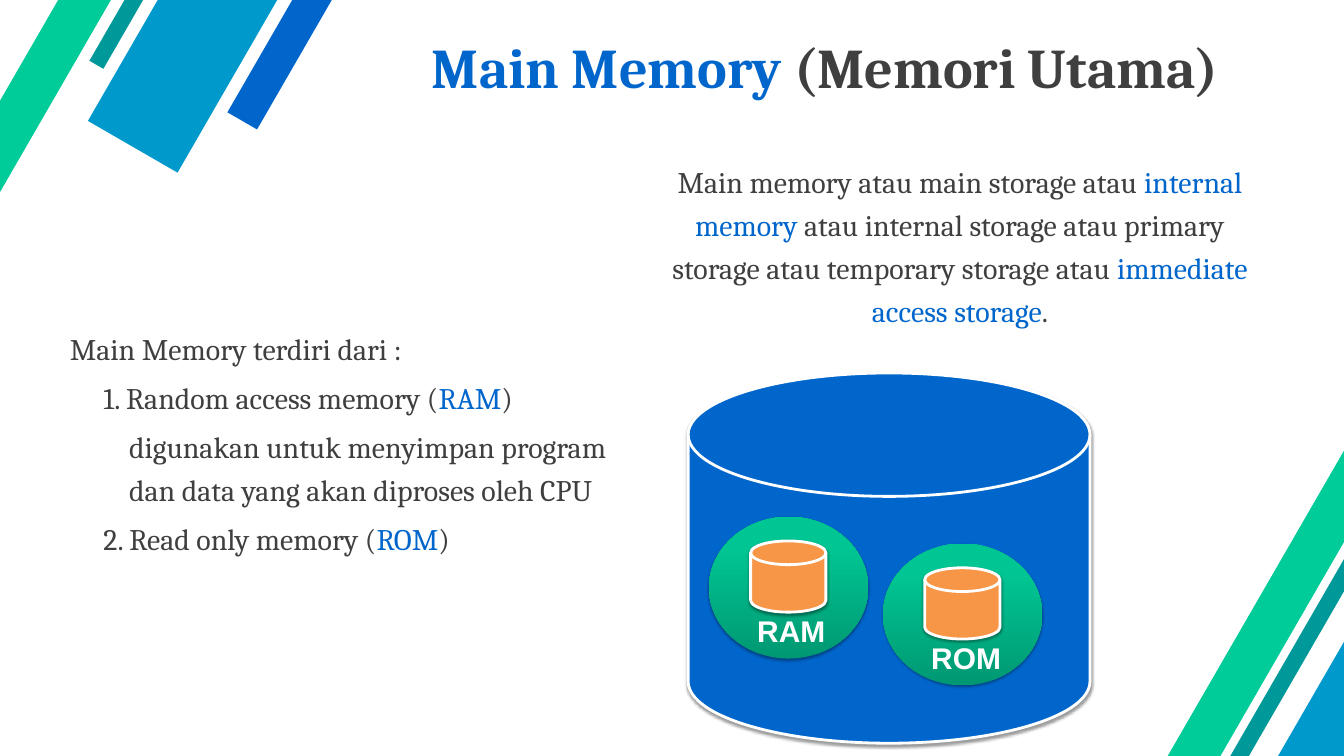
"""Build the main memory slide: RAM and ROM inside one store."""
from lxml import etree
from pptx import Presentation
from pptx import util as u
from pptx.dml.color import RGBColor
from pptx.enum import shapes, text
from pptx.oxml import parse_xml
from pptx.oxml.ns import nsdecls, qn

BLUE, CYAN, TEAL, GREEN = "0066CC", "0099CC", "009999", "00CC99"
GREY, WHITE, ORANGE = "3F3F3F", "FFFFFF", "F79646"
DISK = shapes.MSO_SHAPE.FLOWCHART_MAGNETIC_DISK


def tint(item, code):
    item.rgb = RGBColor.from_string(code)


def draw(kind, box, fill=None, edge=None, shade=0):
    shape = slide.shapes.add_shape(kind, *map(u.Inches, box))
    shape.shadow.inherit = False
    if fill:
        shape.fill.solid()
        tint(shape.fill.fore_color, fill)
    if edge:
        tint(shape.line.color, edge)
        shape.line.width = u.Pt(3)
    else:
        shape.line.fill.background()
    if shade:
        glow = shape._element.spPr.find(qn("a:effectLst"))
        glow.append(parse_xml(
            f'<a:outerShdw {nsdecls("a")} blurRad="40000" dist="{u.Pt(1.7)}" dir="5400000" '
            f'rotWithShape="0"><a:srgbClr val="000000"><a:alpha val="{shade * 1000}"/>'
            '</a:srgbClr></a:outerShdw>'))
    return shape


prs = Presentation()
prs.slide_width, prs.slide_height = u.Inches(20), u.Inches(11.25)
slide = prs.slides.add_slide(prs.slide_layouts[3])

bands = [
    (-1.42, -7.16, 0.51, BLUE), (-3.05, -7.29, 1.54, CYAN),
    (-3.59, -7.86, 0.24, TEAL), (-5.83, -5.47, 0.68, GREEN),
    (13.68, 3.86, 1.54, CYAN), (12.9, 3.33, 0.24, TEAL), (10.71, 5.73, 0.68, GREEN),
]
for x, y, high, code in bands:
    band = draw(shapes.MSO_SHAPE.RECTANGLE, (x, y, 20.1, high), code)
    band.rotation = 300

draw(DISK, (10.24, 5.55, 5.98, 5.51), BLUE, WHITE, 38)

MID, LEFT = text.PP_ALIGN.CENTER, text.PP_ALIGN.LEFT
blocks = [
    (0, (4.8, 0.45, 14.96, 1.08), 60, MID, [("|Main Memory |(Memori Utama)", 0, 0)]),
    (1, (9.64, 2.24, 9.29, 2.2), 32, MID, [
        ("Main memory atau main storage atau |internal memory |atau internal storage atau "
         "primary storage atau temporary storage atau |immediate access storage|.", 0, 0)]),
    (2, (0.86, 4.72, 8.5, 4.91), 32, LEFT, [
        ("Main Memory terdiri dari :", 0, 0),
        ("1. Random access memory (|RAM|)", 0.5, 0),
        ("digunakan untuk menyimpan program dan data yang akan diproses oleh CPU", 0.88, 0),
        ("2. Read only memory (|ROM|)", 0.88, -0.38)]),
]
for key, box, size, align, lines in blocks:
    holder = slide.placeholders[key]
    holder.left, holder.top, holder.width, holder.height = map(u.Inches, box)
    frame = holder.text_frame
    frame.auto_size = text.MSO_AUTO_SIZE.NONE
    frame.word_wrap = True
    frame.margin_left = frame.margin_right = u.Inches(0.18)
    frame.margin_top = frame.margin_bottom = u.Inches(0.09)
    frame.vertical_anchor = text.MSO_ANCHOR.TOP if key else text.MSO_ANCHOR.MIDDLE
    for row, (line, left, hang) in enumerate(lines):
        para = frame.add_paragraph() if row else frame.paragraphs[0]
        para.level = 1 if left else 0
        para.alignment = align
        props = para._p.get_or_add_pPr()
        props.set("marL", str(u.Inches(left)))
        props.set("indent", str(u.Inches(hang)))
        etree.SubElement(props, qn("a:buNone"))
        para.line_spacing = 1.2 if key else 1.0
        para.space_before = u.Pt(6.4 if row else 0)
        para.font.name, para.font.size, para.font.bold = "Cambria", u.Pt(size), key == 0
        tint(para.font.color, GREY)
        for turn, part in enumerate(line.split("|")):
            if part:
                run = para.add_run()
                run.text = part
                tint(run.font.color, BLUE if turn % 2 else GREY)

for name, x, y in [("ROM", 13.14, 8.09), ("RAM", 10.55, 7.69)]:
    disc = draw(shapes.MSO_SHAPE.OVAL, (x, y, 2.37, 2.11), shade=35)
    disc.fill.gradient()
    disc.fill.gradient_angle = 90
    for stop, spot, code in zip(disc.fill.gradient_stops, (0, 0.8), ("009872", "00C694")):
        stop.position = spot
        tint(stop.color, code)
    draw(DISK, (x + 0.62, y + 0.36, 1.12, 1.06), ORANGE, WHITE, 38)
    label = slide.shapes.add_textbox(*map(u.Inches, (x + 0.62, y + 1.38, 1.53, 0.64)))
    label.text_frame.word_wrap = True
    label.text_frame.auto_size = text.MSO_AUTO_SIZE.SHAPE_TO_FIT_TEXT
    para = label.text_frame.paragraphs[0]
    para.text = name
    para.font.name, para.font.size, para.font.bold = "Arial", u.Pt(32), True
    tint(para.font.color, WHITE)

prs.save("out.pptx")
